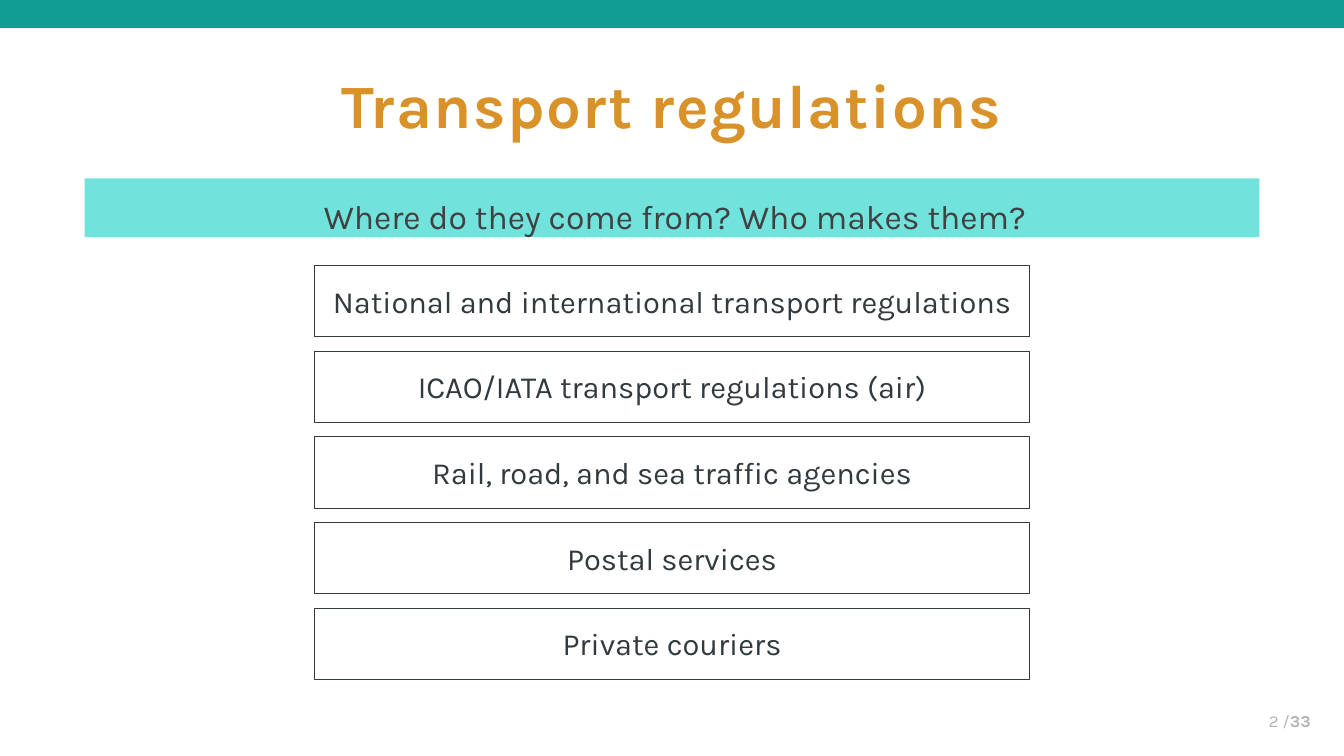
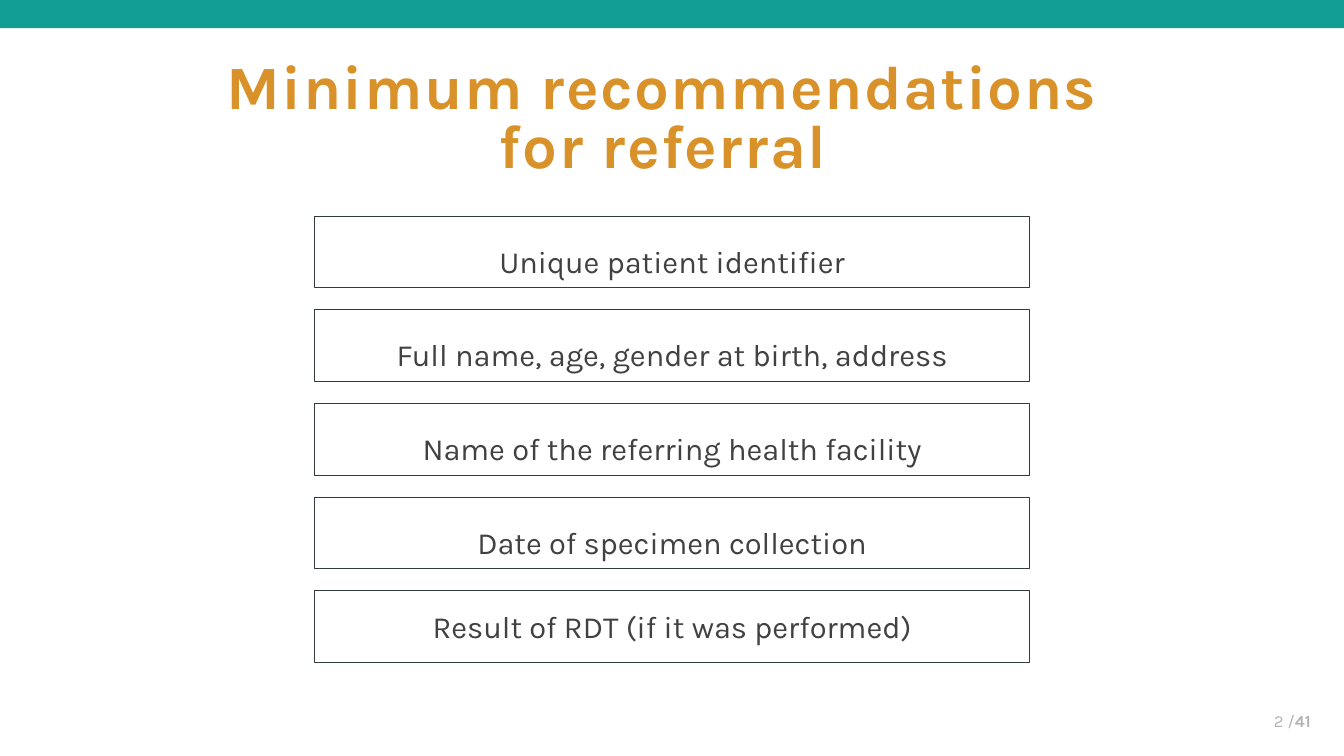
from pptx import Presentation
from pptx.dml.color import RGBColor
from pptx.enum.shapes import MSO_SHAPE
from pptx.enum.text import MSO_ANCHOR, PP_ALIGN
from pptx.util import Inches, Pt

FONT = "Karla"
TEAL = RGBColor(0x11, 0x9C, 0x94)
AQUA = RGBColor(0x71, 0xE2, 0xDC)
ORANGE = RGBColor(0xD9, 0x92, 0x29)
SLATE = RGBColor(0x33, 0x3A, 0x3E)
CHARCOAL = RGBColor(0x41, 0x41, 0x42)
GREY = RGBColor(0xB3, 0xB3, 0xB4)

SLIDES = [
    {
        "title": "Transport regulations",
        "title_at": (1.35, 0.28),
        "question": "Where do they come from? Who makes them?",
        "items": [
            "National and international transport regulations",
            "ICAO/IATA transport regulations (air)",
            "Rail, road, and sea traffic agencies",
            "Postal services",
            "Private couriers",
        ],
        "item_color": SLATE,
        "top": 2.63,
        "step": 0.85,
        "loose_items": 0,
        "total": "33",
    },
    {
        "title": "Minimum recommendations\vfor referral",
        "title_at": (1.26, 0.38),
        "question": None,
        "items": [
            "Unique patient identifier",
            "Full name, age, gender at birth, address",
            "Name of the referring health facility",
            "Date of specimen collection",
            "Result of RDT (if it was performed)",
        ],
        "item_color": CHARCOAL,
        "top": 2.14,
        "step": 0.93,
        "loose_items": 4,
        "total": "41",
    },
]


def add_box(slide, left, top, width, height, fill=None, line=None):
    box = slide.shapes.add_shape(
        MSO_SHAPE.RECTANGLE, Inches(left), Inches(top), Inches(width), Inches(height)
    )
    box.shadow.inherit = False
    if fill is None:
        box.fill.background()
    else:
        box.fill.solid()
        box.fill.fore_color.rgb = fill
    if line is None:
        box.line.fill.background()
    else:
        box.line.color.rgb = line
        box.line.width = Pt(0.25)
    return box


def write(box, text, size, color, align=PP_ALIGN.CENTER, anchor=MSO_ANCHOR.MIDDLE):
    """Set the text of a box and return its only paragraph."""
    frame = box.text_frame
    frame.word_wrap = True
    frame.vertical_anchor = anchor
    para = frame.paragraphs[0]
    para.text = text
    para.alignment = align
    para.font.name = FONT
    para.font.size = Pt(size)
    para.font.color.rgb = color
    return para


deck = Presentation()
deck.slide_width = Inches(13.33)
deck.slide_height = Inches(7.5)

for page in SLIDES:
    slide = deck.slides.add_slide(deck.slide_layouts[6])
    add_box(slide, 0, 0, 13.33, 0.28, fill=TEAL)

    left, top = page["title_at"]
    title = slide.shapes.add_textbox(Inches(left), Inches(top), Inches(10.63), Inches(1.64))
    para = write(title, page["title"], 44, ORANGE)
    para.line_spacing = 0.8
    para.font.bold = True
    for span in para.runs:
        span.font.bold = True
        span.font._element.set("spc", "100")

    if page["question"]:
        add_box(slide, 0.84, 1.77, 11.65, 0.58, fill=AQUA)
        question = slide.shapes.add_textbox(
            Inches(0.86), Inches(1.69), Inches(11.67), Inches(0.59)
        )
        para = write(question, page["question"], 24, CHARCOAL, anchor=MSO_ANCHOR.TOP)
        para.line_spacing = 1.5

    for index, item in enumerate(page["items"]):
        box = add_box(slide, 3.12, page["top"] + index * page["step"], 7.09, 0.71, line=SLATE)
        para = write(box, item, 22, page["item_color"])
        if index < page["loose_items"]:
            para.line_spacing = 1.5

    footer = slide.shapes.add_textbox(Inches(10.1), Inches(6.95), Inches(3), Inches(0.4))
    para = write(footer, "2 /", 12, GREY, align=PP_ALIGN.RIGHT)
    span = para.add_run()
    span.text = page["total"]
    span.font.bold = True

deck.save("out.pptx")
